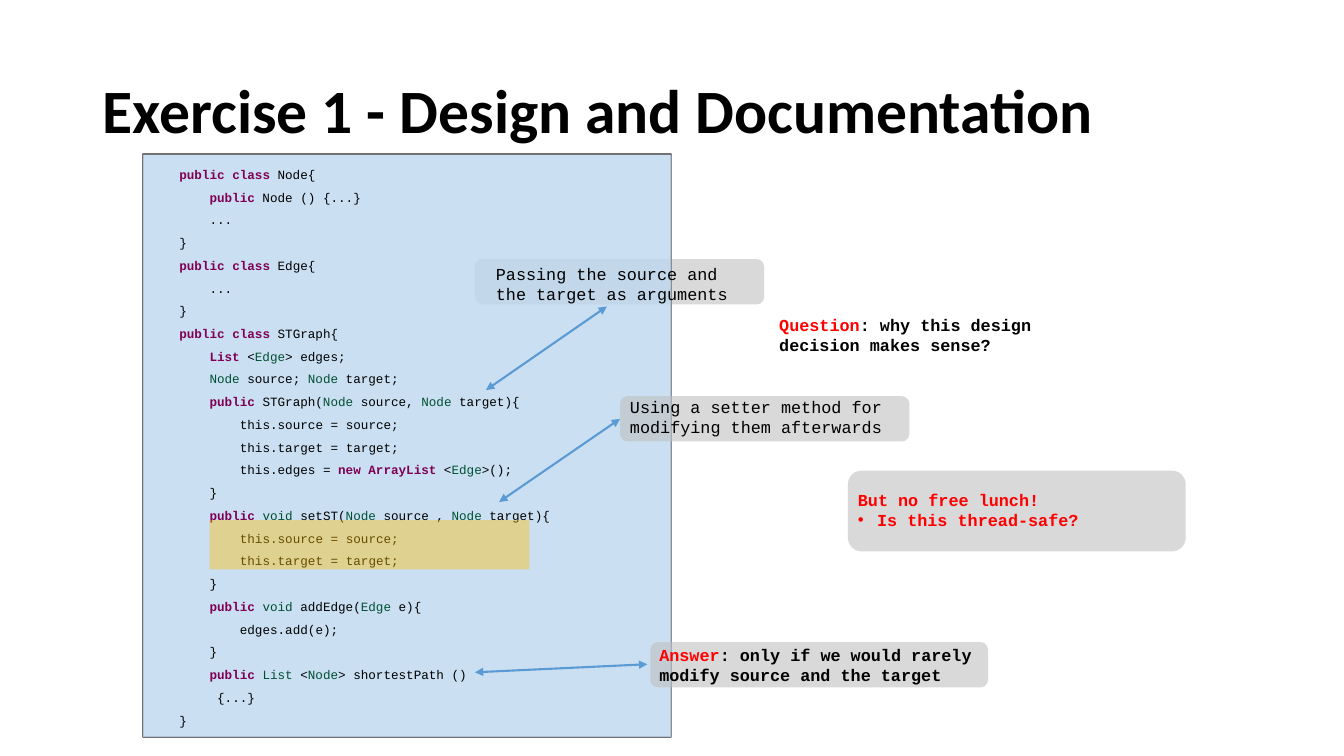
from lxml.etree import SubElement
from pptx import Presentation
from pptx.dml.color import RGBColor
from pptx.enum.shapes import MSO_CONNECTOR, MSO_SHAPE
from pptx.enum.text import MSO_ANCHOR
from pptx.oxml.ns import qn
from pptx.util import Pt

EMU_PER_PX = 9144
CODE = """\
`public class` Node{
    `public` Node () {...}
    ...
}
`public class `Edge{
    ...
}
`public class `STGraph{
    `List` <~Edge~> edges;
    ~Node~ source; ~Node~ target;
    `public `STGraph(~Node~ source, ~Node~ target){
        this.source = source;
        this.target = target;
        this.edges = `new ArrayList` <~Edge~>();
    }
    `public `~void ~setST(~Node~ source , ~Node~ target){
        this.source = source;
        this.target = target;
    }
    `public `~void ~addEdge(~Edge~ e){
        edges.add(e);
    }
    `public `~List~ <~Node~> shortestPath ()
     {...}
}"""


def px(*lengths):
    """Turn whole pixels into EMU."""
    return [length * EMU_PER_PX for length in lengths]


def rgb(colour):
    """Turn a hex string into a colour."""
    return RGBColor.from_string(colour)


def add_bullet(para):
    """Give a paragraph a hanging round bullet."""
    properties = para._p.get_or_add_pPr()
    indent, = px(19)
    properties.set("marL", str(indent))
    properties.set("indent", str(-indent))
    SubElement(properties, qn("a:buFont"), typeface="Arial")
    SubElement(properties, qn("a:buChar"), char="•")


def marked_spans(line, colour, accent, type_colour, bold):
    """Yield text, colour and weight; `accent` and ~type~ are marked."""
    for index, part in enumerate(line.split("`")):
        if index % 2:
            yield part, accent, True
            continue
        for position, piece in enumerate(part.split("~")):
            yield piece, type_colour if position % 2 else colour, bold


def write(frame, text, *, font="Courier New", size=12, colour="000000",
          accent="FF0000", type_colour="005032", bold=False, spacing=None,
          bullets=()):
    """Fill a text frame, one paragraph for each line."""
    for number, line in enumerate(text.split("\n")):
        para = frame.add_paragraph() if number else frame.paragraphs[0]
        if number in bullets:
            add_bullet(para)
        if spacing:
            para.line_spacing = spacing
        for piece, hue, weight in marked_spans(line, colour, accent, type_colour, bold):
            if piece:
                span = para.add_run()
                span.text = piece
                span.font.name = font
                span.font.size = Pt(size)
                span.font.bold = weight
                span.font.color.rgb = rgb(hue)


class SlideBuilder:
    """Hold the slide style and add its elements."""

    arrow_colour = "5B9BD5"
    callout_colour = "BFBFBF"
    line_width = Pt(1.5)

    def __init__(self, deck):
        """Start a blank page."""
        self.page = deck.slides.add_slide(deck.slide_layouts[6])

    def panel(self, area, fill=None, opacity=100, outline=None,
              kind=MSO_SHAPE.RECTANGLE):
        """Add a filled or outlined shape."""
        shape = self.page.shapes.add_shape(kind, *px(*area))
        shape.shadow.inherit = False
        if fill:
            shape.fill.solid()
            shape.fill.fore_color.rgb = rgb(fill)
            hue = shape.fill._xPr.find(".//" + qn("a:srgbClr"))
            SubElement(hue, qn("a:alpha"), val=str(opacity * 1000))
        else:
            shape.fill.background()
        if outline:
            shape.line.color.rgb = rgb(outline)
            shape.line.width = self.line_width
        else:
            shape.line.fill.background()
        return shape

    def callout(self, area):
        """Add a translucent rounded box."""
        return self.panel(area, self.callout_colour, 59, kind=MSO_SHAPE.ROUNDED_RECTANGLE)

    def text(self, area, text, anchor=MSO_ANCHOR.TOP, **style):
        """Add a wrapped text box."""
        box = self.page.shapes.add_textbox(*px(*area))
        box.text_frame.word_wrap = True
        box.text_frame.vertical_anchor = anchor
        write(box.text_frame, text, **style)

    def arrow(self, start, end, target=None):
        """Add a double arrow, joined to the target's left side if given."""
        line = self.page.shapes.add_connector(MSO_CONNECTOR.STRAIGHT, *px(*start, *end))
        if target is not None:
            line.end_connect(target, 1)
        line.line.color.rgb = rgb(self.arrow_colour)
        line.line.width = self.line_width
        outline = line.line._get_or_add_ln()
        for tip in ("a:headEnd", "a:tailEnd"):
            SubElement(outline, qn(tip), type="triangle")
        SubElement(line._element.spPr, qn("a:effectLst"))


def main():
    """Build and save the slide."""
    deck = Presentation()
    deck.slide_width, deck.slide_height = px(1333, 750)
    slide = SlideBuilder(deck)

    slide.callout((471, 257, 287, 45))
    slide.text((92, 40, 1150, 145), "Exercise 1 - Design and Documentation",
               anchor=MSO_ANCHOR.MIDDLE, font="Calibri", size=44, bold=True, spacing=0.9)
    slide.panel((142, 153, 524, 578), outline="767171")
    slide.panel((142, 154, 524, 577), "BDD7EE", 80)
    slide.text((168, 153, 499, 597), CODE, size=9, accent="7F0055", spacing=1.5)

    slide.arrow((482, 387), (602, 304))
    slide.text((482, 257, 276, 50), "Passing the source and the target as arguments")

    setter = slide.callout((615, 393, 287, 45))
    slide.text((615, 389, 276, 50), "Using a setter method for modifying them afterwards")
    slide.arrow((495, 498), (615, 415), setter)

    slide.callout((645, 637, 335, 45))
    slide.text((644, 635, 335, 71),
               "`Answer`: only if we would rarely modify source and the target", bold=True)
    slide.arrow((471, 667), (642, 659))

    slide.text((763, 307, 276, 50), "`Question`: why this design decision makes sense?",
               bold=True)
    slide.callout((841, 467, 335, 80))
    slide.text((841, 481, 335, 50), "But no free lunch!\nIs this thread-safe?",
               colour="FF0000", bold=True, bullets=(1,))
    slide.panel((208, 516, 317, 49), "FFC000", 40)
    deck.save("out.pptx")


if __name__ == "__main__":
    main()
